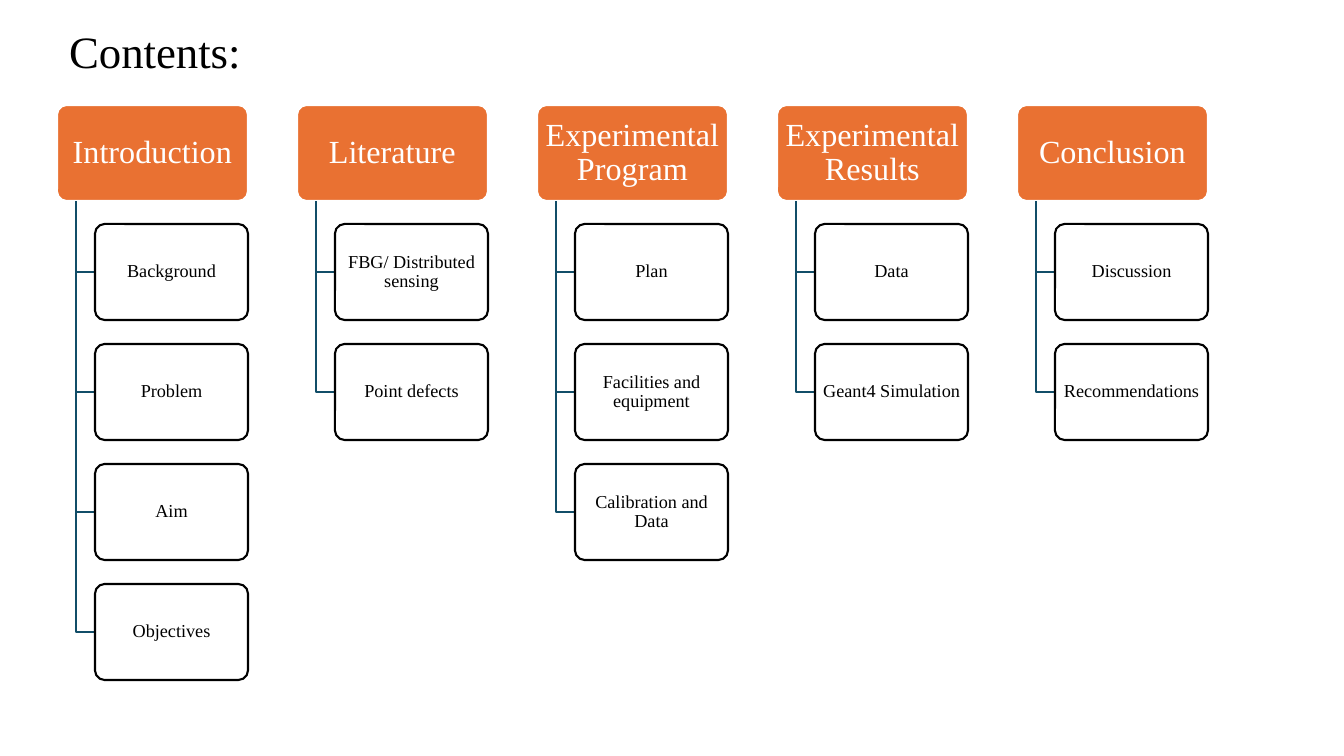
import pptx
import pptx.dml.color
import pptx.enum.shapes
import pptx.enum.text
import pptx.oxml.ns
import pptx.util
from lxml import etree

EMU_PER_PX = 914400 / 100.8
COLORS = {"header": "E97132", "branch": "114D68", "white": "FFFFFF", "black": "000000"}
FONT = "Times New Roman"
COLUMN_STEP, ROW_STEP = 240, 120
CHAPTERS = {
    "Introduction": ["Background", "Problem", "Aim", "Objectives"],
    "Literature": ["FBG/ Distributed sensing", "Point defects"],
    "Experimental Program": ["Plan", "Facilities and equipment", "Calibration and Data"],
    "Experimental Results": ["Data", "Geant4 Simulation"],
    "Conclusion": ["Discussion", "Recommendations"],
}


def px(length):
    return pptx.util.Emu(round(length * EMU_PER_PX))


def rgb(name):
    return pptx.dml.color.RGBColor.from_string(COLORS[name])


def apply(target, values):
    for name, value in values.items():
        setattr(target, name, value)


class ContentsSlide:
    """Draws the contents tree on one slide in a single style."""

    def __init__(self, deck):
        self.shapes = deck.slides.add_slide(deck.slide_layouts[6]).shapes

    def label(self, shape, text, size, color, align, margins):
        frame = shape.text_frame
        across, down = (px(margin) for margin in margins)
        apply(frame, {
            "word_wrap": True,
            "vertical_anchor": pptx.enum.text.MSO_ANCHOR.MIDDLE,
            "margin_left": across, "margin_right": across,
            "margin_top": down, "margin_bottom": down,
        })
        para = frame.paragraphs[0]
        apply(para, {"alignment": align, "line_spacing": 0.9})
        span = para.add_run()
        span.text = text
        apply(span.font, {"name": FONT, "size": pptx.util.Pt(size)})
        span.font.color.rgb = rgb(color)

    def outline(self, shape, color):
        shape.shadow.inherit = False
        shape.line.color.rgb = rgb(color)
        shape.line.width = pptx.util.Pt(1.5)

    def title(self, text, left, top, width, height):
        box = self.shapes.add_textbox(px(left), px(top), px(width), px(height))
        self.label(box, text, 32, "black", pptx.enum.text.PP_ALIGN.LEFT, (10, 5))

    def card(self, text, bounds, fill, line, size, color, margins, opacity=100):
        kind = pptx.enum.shapes.MSO_SHAPE.ROUNDED_RECTANGLE
        card = self.shapes.add_shape(kind, *map(px, bounds))
        card.adjustments[0] = 0.1
        card.fill.solid()
        card.fill.fore_color.rgb = rgb(fill)
        if opacity < 100:
            tint = card.element.spPr.find(".//" + pptx.oxml.ns.qn("a:srgbClr"))
            alpha = etree.SubElement(tint, pptx.oxml.ns.qn("a:alpha"))
            alpha.set("val", str(opacity * 1000))
        self.outline(card, line)
        self.label(card, text, size, color, pptx.enum.text.PP_ALIGN.CENTER, margins)

    def branch(self, left, top, right, bottom):
        builder = self.shapes.build_freeform(left, top, scale=EMU_PER_PX)
        builder.add_line_segments([(left, bottom), (right, bottom)], close=False)
        elbow = builder.convert_to_shape()
        elbow.fill.background()
        self.outline(elbow, "branch")

    def chapter(self, name, topics, left):
        self.card(name, (left, 105, 191, 96), "header", "white", 23, "white", (5, 3))
        for row, topic in enumerate(topics):
            top = 224 + row * ROW_STEP
            self.branch(left + 19, 201, left + 38, top + 48)
            self.card(topic, (left + 38, top, 153, 96), "white", "black",
                      13, "black", (3, 2), opacity=90)


def main():
    deck = pptx.Presentation()
    apply(deck, {"slide_width": px(1344), "slide_height": px(756)})
    slide = ContentsSlide(deck)
    slide.title("Contents:", 59, -19, 1159, 146)
    for column, (name, topics) in enumerate(CHAPTERS.items()):
        slide.chapter(name, topics, 57 + column * COLUMN_STEP)
    deck.save("out.pptx")


if __name__ == "__main__":
    main()
